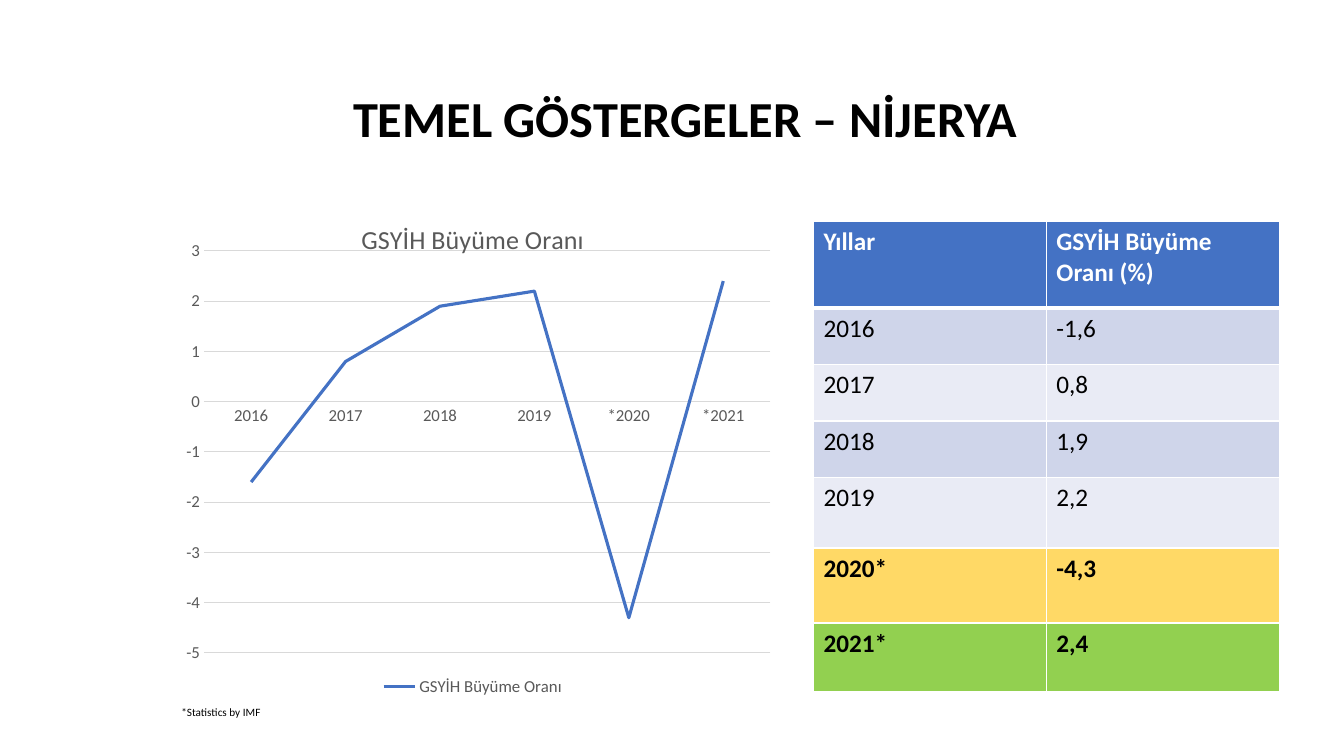
from lxml import etree
from pptx import Presentation
from pptx.chart import data as cd
from pptx.dml.color import RGBColor
from pptx.enum import chart as ch, text as tx
from pptx.oxml import ns, parse_xml
from pptx.util import Cm, Pt

# Content
TITLE = "TEMEL GÖSTERGELER – NİJERYA"
NOTE = "*Statistics by IMF"
RATE = "GSYİH Büyüme Oranı"
YEARS = ["2016", "2017", "2018", "2019", "*2020", "*2021"]
RATES = [-1.6, 0.8, 1.9, 2.2, -4.3, 2.4]

FONT = "Calibri"
BLACK = RGBColor(0, 0, 0)
WHITE = RGBColor(255, 255, 255)
GREY = RGBColor(0x59, 0x59, 0x59)
RULE = RGBColor(0xD9, 0xD9, 0xD9)
BLUE = RGBColor(0x44, 0x72, 0xC4)
BAND = RGBColor(0xCF, 0xD5, 0xEA)
PALE = RGBColor(0xE9, 0xEB, 0xF5)
GOLD = RGBColor(0xFF, 0xD9, 0x66)
GREEN = RGBColor(0x92, 0xD0, 0x50)

# Table rows: cells, height in cm, fill, text colour, bold
HEAD = (["Yıllar", RATE + " (%)"], 2.18, BLUE, WHITE, True)
PAST = [(["2016", "-1,6"], 1.42, BAND, BLACK, False),
        (["2017", "0,8"], 1.42, PALE, BLACK, False),
        (["2018", "1,9"], 1.42, BAND, BLACK, False),
        (["2019", "2,2"], 1.78, PALE, BLACK, False)]
NEXT = (["2020*", "-4,3"], 2.03, GOLD, BLACK, True)
LAST = (["2021*", "2,4"], 1.77, GREEN, BLACK, True)
# Tables: top in cm and rows; the first row has a thick lower edge
TABLES = [(5.59, [HEAD] + PAST), (13.82, [NEXT]), (15.7, [LAST])]
LEFT, COL = 20.5, 5.87


def style(font, size, color, bold=False):
    font.name, font.size, font.bold = FONT, Pt(size), bold
    font.color.rgb = color


def write(frame, words, *look):
    run = frame.paragraphs[0].add_run()
    run.text = words
    style(run.font, *look)


def edge(cell, side, width):
    line = etree.SubElement(cell._tc.get_or_add_tcPr(), ns.qn("a:ln" + side),
                            w=str(Pt(width)))
    fill = etree.SubElement(line, ns.qn("a:solidFill"))
    etree.SubElement(fill, ns.qn("a:srgbClr"), val=str(WHITE))


def add_grid(slide, top, rows):
    high = sum(row[1] for row in rows)
    grid = slide.shapes.add_table(len(rows), 2, Cm(LEFT), Cm(top),
                                  Cm(2 * COL), Cm(high)).table
    grid.horz_banding = False
    for col in grid.columns:
        col.width = Cm(COL)
    for i, (words, tall, fill, color, bold) in enumerate(rows):
        grid.rows[i].height = Cm(tall)
        for cell, word in zip(grid.rows[i].cells, words):
            for side, width in (("L", 1), ("R", 1), ("T", 3 if i == 1 else 1),
                                ("B", 3 if i == 0 else 1)):
                edge(cell, side, width)
            cell.fill.solid()
            cell.fill.fore_color.rgb = fill
            write(cell.text_frame, word, 18, color, bold)


def add_graph(slide):
    data = cd.CategoryChartData()
    data.categories = YEARS
    data.add_series(RATE, RATES)
    graph = slide.shapes.add_chart(ch.XL_CHART_TYPE.LINE, Cm(4.32), Cm(5.08),
                                   Cm(15.19), Cm(12.57), data).chart
    style(graph.font, 10, BLACK)

    # Title and legend
    graph.has_title = True
    write(graph.chart_title.text_frame, RATE, 18.6, GREY)
    graph.chart_title.include_in_layout = True
    graph.has_legend = True
    graph.legend.position = ch.XL_LEGEND_POSITION.BOTTOM
    graph.legend.include_in_layout = False
    style(graph.legend.font, 12, GREY)

    # Axes
    cat, val = graph.category_axis, graph.value_axis
    for axis in (cat, val):
        axis.major_tick_mark = axis.minor_tick_mark = ch.XL_TICK_MARK.NONE
        style(axis.tick_labels.font, 12, GREY)
    cat.format.line.color.rgb = RULE
    cat.format.line.width = Pt(0.75)
    val.format.line.fill.background()
    val.minimum_scale, val.maximum_scale, val.major_unit = -5, 3, 1
    rule = val.major_gridlines.format.line
    rule.color.rgb, rule.width = RULE, Pt(0.75)

    # Growth line
    line = graph.plots[0].series[0]
    line.smooth = False
    line.marker.style = ch.XL_MARKER_STYLE.NONE
    line.format.line.color.rgb = BLUE
    line.format.line.width = Pt(2.25)

    # Inner plot area, as shares of the chart
    parts = [("layoutTarget", "inner"), ("xMode", "edge"), ("yMode", "edge"),
             ("x", 0.054), ("y", 0.099), ("w", 0.94), ("h", 0.806)]
    body = "".join(f'<c:{tag} val="{val}"/>' for tag, val in parts)
    area = graph._chartSpace.chart.plotArea
    for old in area.findall(ns.qn("c:layout")):
        area.remove(old)
    area.insert(0, parse_xml(f'<c:layout {ns.nsdecls("c")}><c:manualLayout>'
                             f'{body}</c:manualLayout></c:layout>'))


def main():
    deck = Presentation()
    deck.slide_width, deck.slide_height = Cm(33.87), Cm(19.05)
    slide = deck.slides.add_slide(deck.slide_layouts[5])

    # Title
    title = slide.shapes.title
    title.left, title.top = Cm(3.3), Cm(2.24)
    title.width, title.height = Cm(27.94), Cm(2.29)
    frame = title.text_frame
    frame.vertical_anchor = tx.MSO_ANCHOR.TOP
    frame.auto_size = tx.MSO_AUTO_SIZE.NONE
    write(frame, TITLE, 36, BLACK, True)
    frame.paragraphs[0].alignment = tx.PP_ALIGN.CENTER
    frame.paragraphs[0].line_spacing = 0.9

    # Chart and tables
    add_graph(slide)
    for top, rows in TABLES:
        add_grid(slide, top, rows)

    # Footnote
    note = slide.shapes.add_textbox(Cm(4.32), Cm(17.65), Cm(12.93), Cm(0.6))
    note.text_frame.word_wrap = True
    write(note.text_frame, NOTE, 8, BLACK)
    deck.save("out.pptx")


if __name__ == "__main__":
    main()
